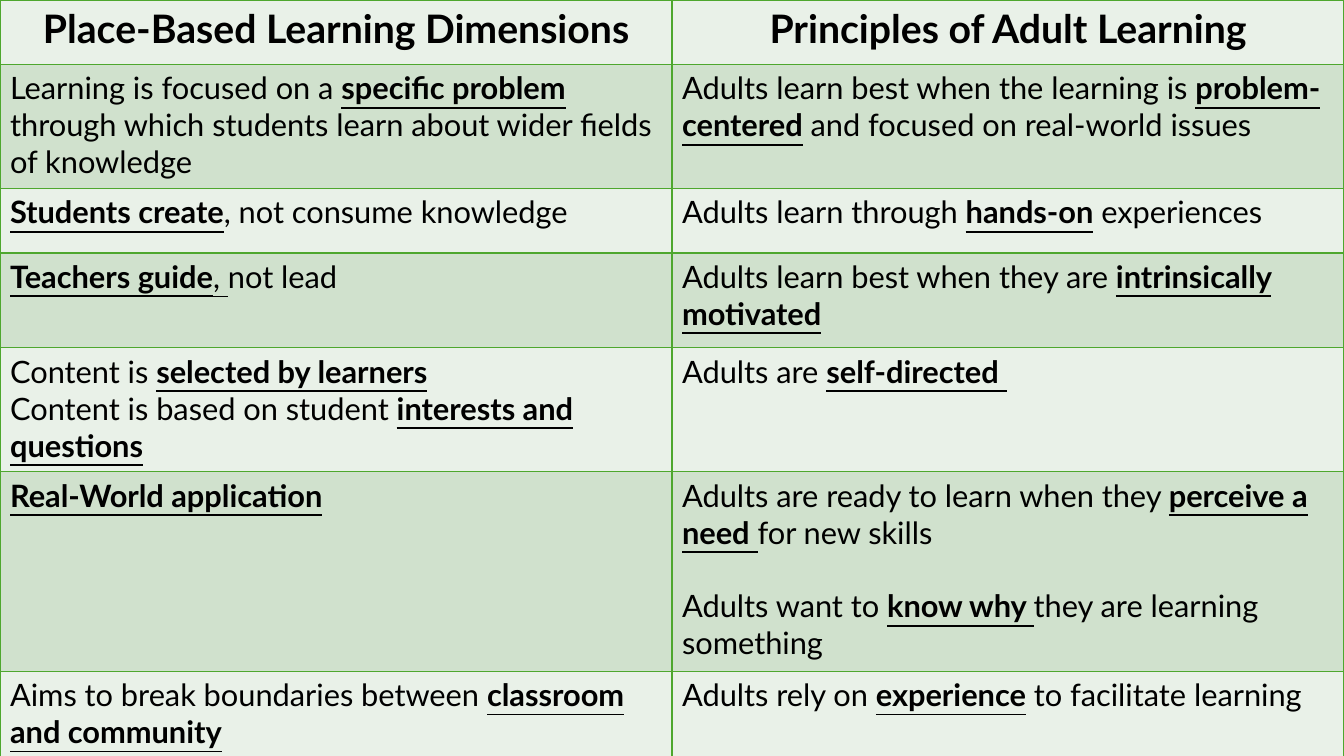
from lxml.etree import SubElement
from pptx import Presentation
from pptx.dml.color import RGBColor
from pptx.enum.text import PP_ALIGN
from pptx.oxml.ns import qn
from pptx.util import Inches, Pt

HEADINGS = ["Place-Based Learning Dimensions", "Principles of Adult Learning"]
# "|" separates spans; "*" opens a bold underlined span, "_" an underlined one.
ROWS = [
    (1.23, ["Learning is focused on a |*specific problem |through which students learn about wider fields of knowledge"],
     ["Adults learn best when the learning is |*problem-centered| and focused on real-world issues"]),
    (0.64, ["*Students create|, not consume knowledge"],
     ["Adults learn through |*hands-on| experiences"]),
    (0.94, ["*Teachers guide|_, |not lead"],
     ["Adults learn best when they are |*intrinsically motivated"]),
    (1.23, ["Content is |*selected by learners",
            "Content is based on student |*interests and questions"],
     ["Adults are |*self-directed|_ "]),
    (1.98, ["*Real-World application"],
     ["Adults are ready to learn when they |*perceive a need|_ |for new skills",
      "Adults want to |*know why |they are learning something"]),
    (0.85, ["Aims to break boundaries between |*classroom and community"],
     ["Adults rely on |*experience| to facilitate learning"]),
]
HEADING_HEIGHT = 0.64
WIDTH, HEIGHT = 13.33, 7.5
COLORS = {"text": "000000", "light": "E9F1E8", "dark": "D0E1CD", "border": "4EA72E"}
FONT = "Lato"
BODY_SIZE = 22
LINE_SPACING = 1.2


def write_text(cell, paragraphs, size=BODY_SIZE, bold=False, align=PP_ALIGN.LEFT, gap=0):
    frame = cell.text_frame
    for index, text in enumerate(paragraphs):
        para = frame.add_paragraph() if index else frame.paragraphs[0]
        para.alignment = align
        if index:
            para.space_before = Pt(gap)
        for part in text.split("|"):
            span = para.add_run()
            span.text = part.lstrip("*_")
            span.font.name = FONT
            span.font.size = Pt(size)
            span.font.bold = bold or part.startswith("*")
            span.font.underline = part.startswith(("*", "_"))
            span.font.color.rgb = RGBColor.from_string(COLORS["text"])


def style_cell(cell, fill):
    properties = cell._tc.get_or_add_tcPr()
    for side in ("lnL", "lnR", "lnT", "lnB"):
        line = SubElement(properties, qn(f"a:{side}"), w=str(Pt(1)))
        solid = SubElement(line, qn("a:solidFill"))
        SubElement(solid, qn("a:srgbClr"), val=COLORS["border"])
    cell.fill.solid()
    cell.fill.fore_color.rgb = RGBColor.from_string(COLORS[fill])


def main():
    deck = Presentation()
    deck.slide_width, deck.slide_height = Inches(WIDTH), Inches(HEIGHT)
    page = deck.slides.add_slide(deck.slide_layouts[6])
    table = page.shapes.add_table(
        len(ROWS) + 1, len(HEADINGS), 0, 0, deck.slide_width, deck.slide_height).table

    heights = [HEADING_HEIGHT] + [height for height, *_ in ROWS]
    for row, height in zip(table.rows, heights):
        row.height = Inches(height)
    for row_index, row in enumerate(table.rows):
        for cell in row.cells:
            style_cell(cell, "dark" if row_index % 2 else "light")

    for column, heading in enumerate(HEADINGS):
        write_text(table.cell(0, column), [heading], size=28, bold=True, align=PP_ALIGN.CENTER)
    for row_index, (_, *cells) in enumerate(ROWS, start=1):
        for column, paragraphs in enumerate(cells):
            spaced = column == 1
            write_text(table.cell(row_index, column), paragraphs,
                       gap=BODY_SIZE * LINE_SPACING if spaced else 0)

    deck.save("out.pptx")


if __name__ == "__main__":
    main()
